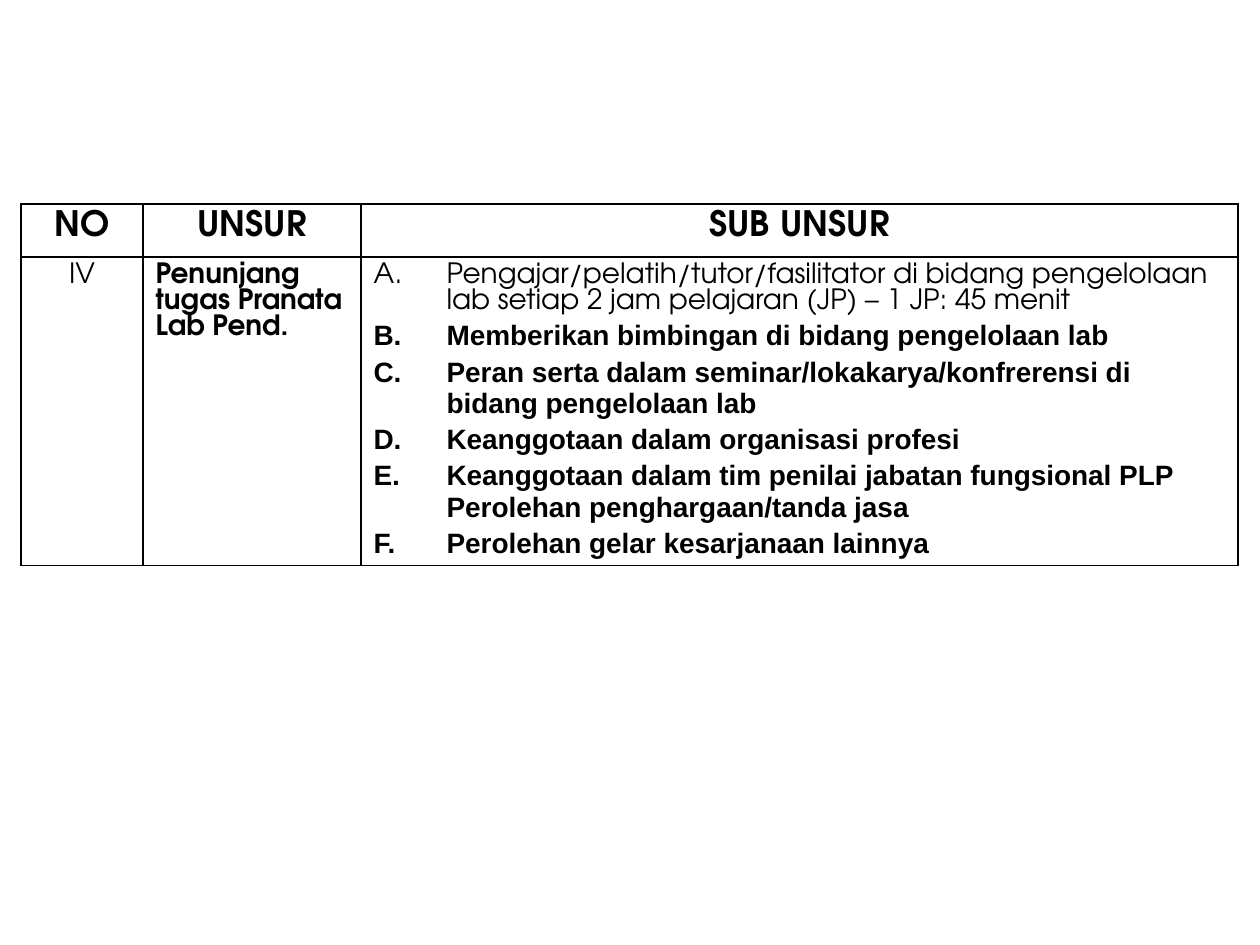
from dataclasses import dataclass
from lxml.etree import SubElement
from pptx import Presentation
from pptx.dml.color import RGBColor
from pptx.enum.text import PP_ALIGN
from pptx.oxml import parse_xml
from pptx.oxml.ns import nsdecls, qn
from pptx.util import Pt

SCALE = 914400 // 126


def px(size):
    return size * SCALE


@dataclass(frozen=True)
class Theme:
    ink: str = "000000"
    head: int = 20
    body: int = 16
    gap: int = 3
    rule: int = 1
    font: str = "TeX Gyre Adventor"
    plain: str = "Arial"


class Deck:
    def __init__(self, theme):
        self.theme = theme
        self.file = Presentation()
        self.file.slide_width = px(1260)
        self.file.slide_height = px(945)
        self.slide = self.file.slides.add_slide(self.file.slide_layouts[6])

    def table(self, left, top, cols, rows, height):
        frame = self.slide.shapes.add_table(
            len(rows), len(cols), px(left), px(top), px(sum(cols)), px(height))
        table = frame.table
        table.first_row = table.horz_banding = False
        for col, width in zip(table.columns, cols):
            col.width = px(width)
        for row, tall in zip(table.rows, rows):
            row.height = px(tall)
        frame.height = px(height)
        for cell in table.iter_cells():
            cell.fill.background()
            self.border(cell)
        return table

    def border(self, cell):
        props = cell._tc.get_or_add_tcPr()
        for spot, side in enumerate("LRTB"):
            props.insert(spot, parse_xml(
                f'<a:ln{side} {nsdecls("a")} w="{Pt(self.theme.rule)}"><a:solidFill>'
                f'<a:srgbClr val="{self.theme.ink}"/></a:solidFill></a:ln{side}>'))

    def text(self, para, words, size, bold=True, font=None, align=PP_ALIGN.LEFT):
        para.alignment = align
        run = para.add_run()
        run.text = words
        run.font.name = font or self.theme.font
        run.font.size = Pt(size)
        run.font.bold = bold
        run.font.color.rgb = RGBColor.from_string(self.theme.ink)

    def items(self, cell, lines):
        frame = cell.text_frame
        for spot, words in enumerate(lines):
            para = frame.add_paragraph() if spot else frame.paragraphs[0]
            props = para._p.get_or_add_pPr()
            props.set("marL", str(px(73)))
            props.set("indent", str(px(-73)))
            SubElement(props, qn("a:buAutoNum"), type="alphaUcPeriod")
            if spot:
                para.space_before = Pt(self.theme.gap)
            self.text(para, words, self.theme.body, spot > 0,
                      self.theme.plain if spot else None)


def main():
    theme = Theme()
    deck = Deck(theme)
    table = deck.table(21, 204, (122, 218, 877), (53, 208), 403)
    for col, words in enumerate(("NO", "UNSUR", "SUB UNSUR")):
        deck.text(table.cell(0, col).text_frame.paragraphs[0], words,
                  theme.head, align=PP_ALIGN.CENTER)
    deck.text(table.cell(1, 0).text_frame.paragraphs[0], "IV",
              theme.body, False, align=PP_ALIGN.CENTER)
    deck.text(table.cell(1, 1).text_frame.paragraphs[0],
              "Penunjang tugas Pranata Lab Pend.", theme.body)
    deck.items(table.cell(1, 2), (
        "Pengajar/pelatih/tutor/fasilitator di bidang pengelolaan lab "
        "setiap 2 jam pelajaran (JP) – 1 JP: 45 menit",
        "Memberikan bimbingan di bidang pengelolaan lab",
        "Peran serta dalam seminar/lokakarya/konfrerensi di bidang pengelolaan lab",
        "Keanggotaan dalam organisasi profesi",
        "Keanggotaan dalam tim penilai jabatan fungsional PLP "
        "Perolehan penghargaan/tanda jasa",
        "Perolehan gelar kesarjanaan lainnya",
    ))
    deck.file.save("out.pptx")


if __name__ == "__main__":
    main()
